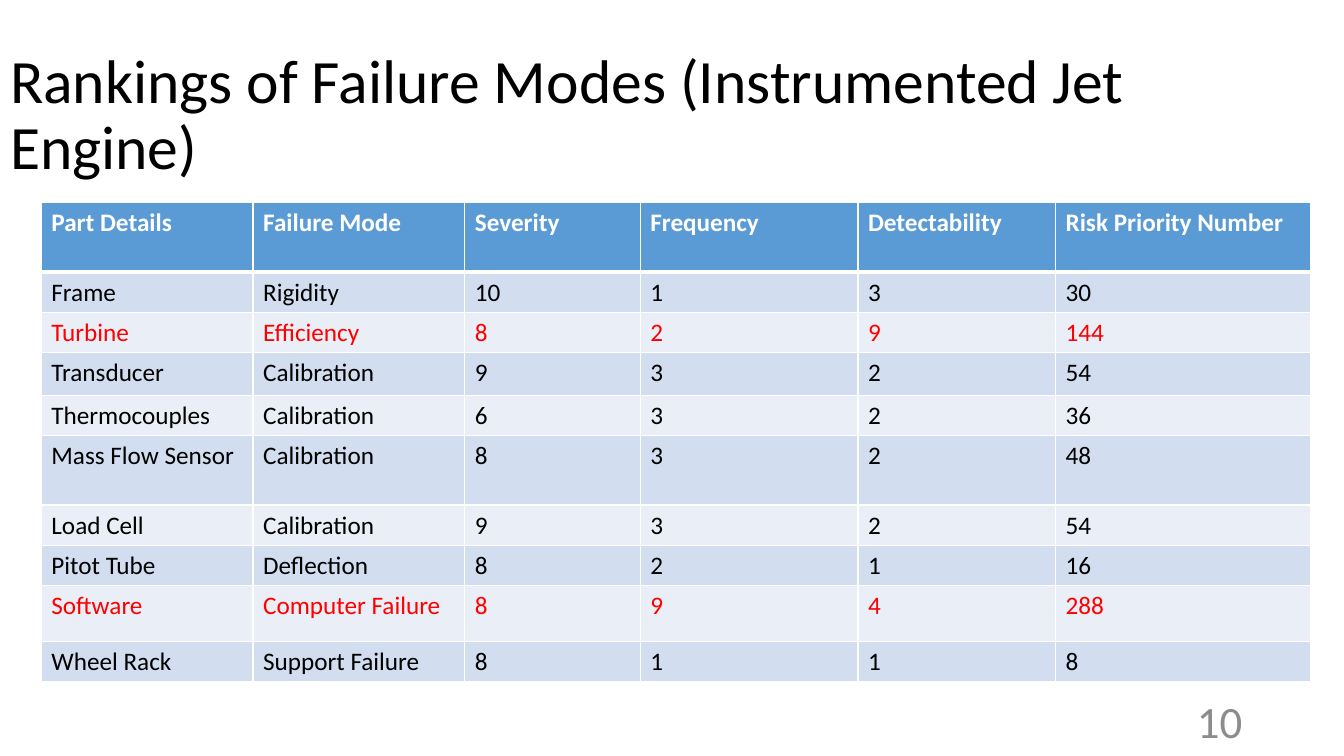
from math import prod

from pptx import Presentation
from pptx.dml.color import RGBColor
from pptx.enum import text
from pptx.oxml import parse_xml
from pptx.oxml.ns import nsdecls
from pptx.util import Inches, Pt

# Content
TITLE = "Rankings of Failure Modes (Instrumented Jet Engine)"
PAGE_NUMBER = "10"
HEADINGS = ("Part Details", "Failure Mode", "Severity", "Frequency",
            "Detectability", "Risk Priority Number")
# Part, failure mode, (severity, frequency, detectability)
FAILURES = [
    ("Frame", "Rigidity", (10, 1, 3)),
    ("Turbine", "Efficiency", (8, 2, 9)),
    ("Transducer", "Calibration", (9, 3, 2)),
    ("Thermocouples", "Calibration", (6, 3, 2)),
    ("Mass Flow Sensor", "Calibration", (8, 3, 2)),
    ("Load Cell", "Calibration", (9, 3, 2)),
    ("Pitot Tube", "Deflection", (8, 2, 1)),
    ("Software", "Computer Failure", (8, 9, 4)),
    ("Wheel Rack", "Support Failure", (8, 1, 1)),
]
HIGH_RISK = 100

# Layout in inches
SLIDE_SIZE = (13.33, 7.5)
TITLE_BOX = (0, 0.46, 13.13, 1.39)
NUMBER_BOX = (9.42, 6.95, 3, 0.4)
TABLE_CORNER = (0.41, 2.01)
COLUMNS = (2.1, 2.1, 1.74, 2.16, 1.96, 2.53)
BASE_ROW = 0.39
ROWS = [BASE_ROW] * (len(FAILURES) + 1)
ROWS[0] = ROWS[5] = 0.69
ROWS[3], ROWS[8] = 0.42, 0.55

# Format
FONT = "Calibri"
BLACK = RGBColor(0x00, 0x00, 0x00)
WHITE = RGBColor(0xFF, 0xFF, 0xFF)
RED = RGBColor(0xFF, 0x00, 0x00)
GREY = RGBColor(0x8C, 0x8C, 0x8C)
BLUE = RGBColor(0x5B, 0x9B, 0xD5)
BANDS = (RGBColor(0xEA, 0xEF, 0xF7), RGBColor(0xD2, 0xDE, 0xEF))


def write(frame, words, size, color, bold=False, **paragraph_format):
    para = frame.paragraphs[0]
    for name, value in paragraph_format.items():
        setattr(para, name, value)
    span = para.add_run()
    span.text = words
    for name, value in {"name": FONT, "size": Pt(size), "bold": bold}.items():
        setattr(span.font, name, value)
    span.font.color.rgb = color


def add_borders(cell, widths):
    for side, width in widths.items():
        cell._tc.get_or_add_tcPr().append(parse_xml(
            f'<a:ln{side} {nsdecls("a")} w="{Pt(width)}"><a:solidFill>'
            f'<a:srgbClr val="{WHITE}"/></a:solidFill></a:ln{side}>'))


deck = Presentation()
deck.slide_width, deck.slide_height = map(Inches, SLIDE_SIZE)
page = deck.slides.add_slide(deck.slide_layouts[5])

# Title
title = page.shapes.title
title.left, title.top, title.width, title.height = map(Inches, TITLE_BOX)
title.text_frame.auto_size = text.MSO_AUTO_SIZE.NONE
title.text_frame.vertical_anchor = text.MSO_ANCHOR.MIDDLE
write(title.text_frame, TITLE, 44, BLACK,
      alignment=text.PP_ALIGN.LEFT, line_spacing=0.9)

# Page number
number = page.shapes.add_textbox(*map(Inches, NUMBER_BOX)).text_frame
number.word_wrap = True
number.vertical_anchor = text.MSO_ANCHOR.MIDDLE
write(number, PAGE_NUMBER, 32, GREY, alignment=text.PP_ALIGN.RIGHT)

# Table: the risk priority number is the product of the three scores
records = [HEADINGS] + [(part, mode, *scores, prod(scores))
                        for part, mode, scores in FAILURES]
table = page.shapes.add_table(
    len(ROWS), len(COLUMNS),
    *map(Inches, (*TABLE_CORNER, sum(COLUMNS), sum(ROWS)))).table
for column, width in zip(table.columns, COLUMNS):
    column.width = Inches(width)

for r, (record, height) in enumerate(zip(records, ROWS)):
    table.rows[r].height = Inches(height)
    header = r == 0
    if header:
        color, fill = WHITE, BLUE
    else:
        color = RED if record[-1] > HIGH_RISK else BLACK
        fill = BANDS[r % 2]
    widths = {"L": 1, "R": 1, "T": 3 if r == 1 else 1, "B": 3 if header else 1}
    for c, value in enumerate(record):
        cell = table.cell(r, c)
        add_borders(cell, widths)
        cell.fill.solid()
        cell.fill.fore_color.rgb = fill
        write(cell.text_frame, str(value), 18, color, bold=header)

deck.save("out.pptx")
